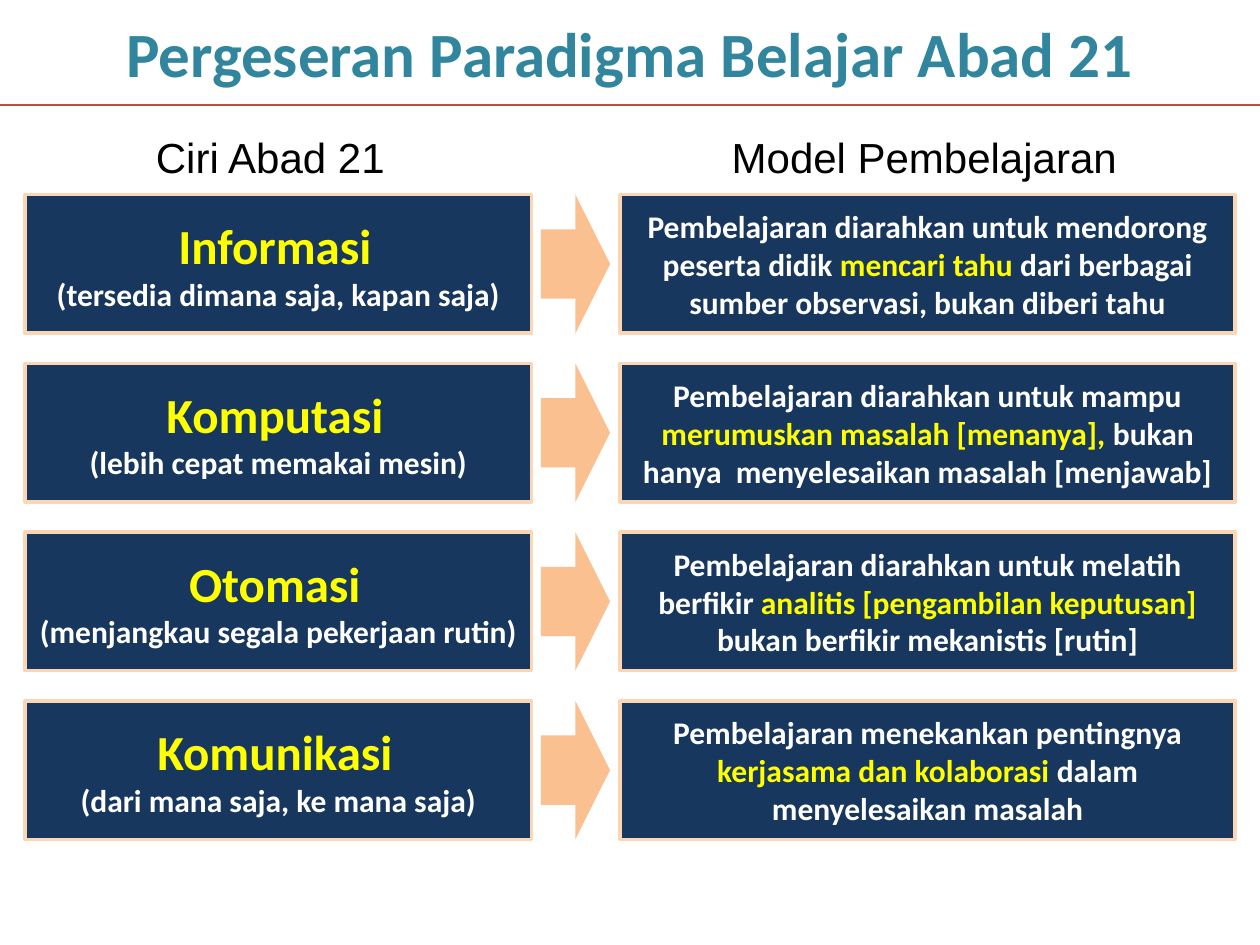
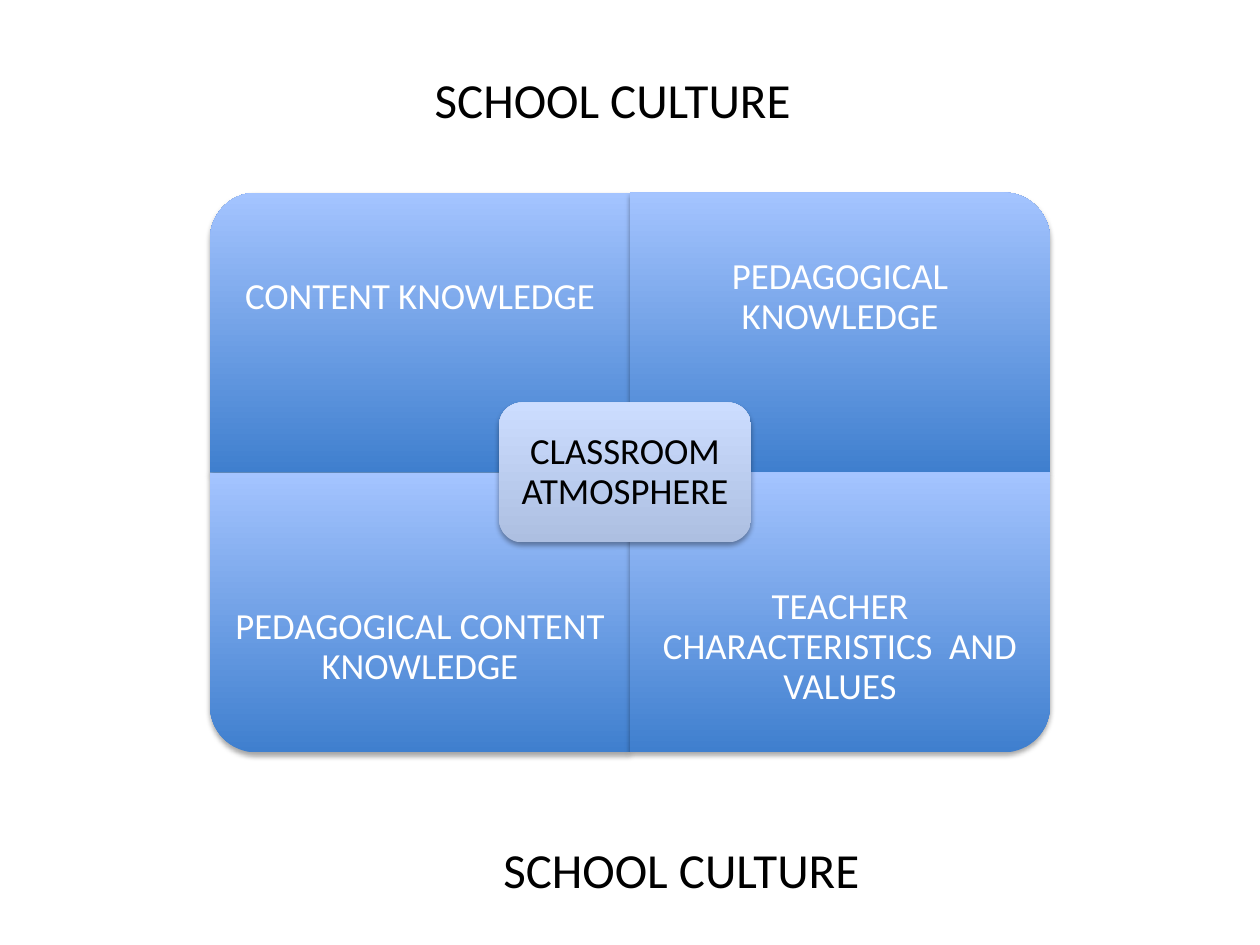
"""Builds two slides on learning in the 21st century and on school culture."""
from lxml import etree
from pptx import Presentation
from pptx.dml.color import RGBColor
from pptx.enum import shapes, text
from pptx.oxml import ns
from pptx.util import Pt

HUES = {
    "navy": "17375E", "peach": "FCD5B5", "orange": "FAC090", "teal": "31859C",
    "red": "BF4C48", "yellow": "FFFF00", "white": "FFFFFF", "black": "000000",
    "deep": "3F7FCE", "sky": "A4C4FF", "mist": "ADBFE1", "pale": "CCDDFF",
}
RGB = {name: RGBColor.from_string(hue) for name, hue in HUES.items()}
KINDS = shapes.MSO_SHAPE
MID = {"vertical_anchor": text.MSO_ANCHOR.MIDDLE, "word_wrap": True}
GROW = {"word_wrap": True, "auto_size": text.MSO_AUTO_SIZE.SHAPE_TO_FIT_TEXT}
LEFT, CENTER = text.PP_ALIGN.LEFT, text.PP_ALIGN.CENTER
SIDES = ("margin_left", "margin_top", "margin_right", "margin_bottom")


def write(shape, paras, frame, align=CENTER, gap=1.0, face="Calibri", bold=False):
    """Fill a shape with paragraphs made of (text, size, colour) runs."""
    body = shape.text_frame
    for key, value in frame.items():
        setattr(body, key, value)
    for i, runs in enumerate(paras):
        para = body.add_paragraph() if i else body.paragraphs[0]
        para.alignment, para.line_spacing = align, gap
        for words, size, hue in runs:
            run = para.add_run()
            run.text = words
            for key, value in {"name": face, "size": Pt(size), "bold": bold}.items():
                setattr(run.font, key, value)
            run.font.color.rgb = RGB[hue]


def block(slide, kind, spot, fill, line=None):
    """Add a shape with a solid fill, or a (bottom, top) gradient and a shadow."""
    shape = slide.shapes.add_shape(kind, *map(Pt, spot))
    shape.shadow.inherit = False
    if line:
        shape.line.color.rgb, shape.line.width = RGB[line], Pt(2)
    else:
        shape.line.fill.background()
    if isinstance(fill, str):
        shape.fill.solid()
        shape.fill.fore_color.rgb = RGB[fill]
        return shape
    shape.fill.gradient()
    shape.fill.gradient_angle = 90
    for stop, hue in zip(shape.fill.gradient_stops, fill):
        stop.color.rgb = RGB[hue]
    props = shape.element.spPr
    props.find(ns.qn("a:gradFill")).set("rotWithShape", "0")
    glow = etree.SubElement(
        props.find(ns.qn("a:effectLst")), ns.qn("a:outerShdw"),
        blurRad=str(Pt(3.1)), dist=str(Pt(1.8)), dir="5400000", rotWithShape="0")
    tint = etree.SubElement(glow, ns.qn("a:srgbClr"), val=HUES["black"])
    etree.SubElement(tint, ns.qn("a:alpha"), val="35000")
    return shape


deck = Presentation()
deck.slide_width, deck.slide_height = Pt(720), Pt(540)

slide = deck.slides.add_slide(deck.slide_layouts[5])
title = slide.shapes.title
for key, value in {"left": 0, "top": 0, "width": 720, "height": 60}.items():
    setattr(title, key, Pt(value))
write(title, [[("Pergeseran Paradigma Belajar Abad 21", 36, "teal")]],
      MID | {"auto_size": text.MSO_AUTO_SIZE.NONE}, bold=True)

rule = slide.shapes.add_connector(shapes.MSO_CONNECTOR.STRAIGHT, 0, Pt(60), Pt(720), Pt(60))
rule.line.color.rgb, rule.line.width = RGB["red"], Pt(0.75)
etree.SubElement(rule.element.spPr, ns.qn("a:effectLst"))

for words, left, width in (("Ciri Abad 21", 82, 147), ("Model Pembelajaran", 411, 237)):
    head = slide.shapes.add_textbox(Pt(left), Pt(71.7), Pt(width), Pt(36))
    write(head, [[(words, 24, "black")]], GROW | {"word_wrap": False}, LEFT, face="Arial")

SHIFTS = [
    ("Informasi", "(tersedia dimana saja, kapan saja)",
     "Pembelajaran diarahkan untuk mendorong peserta didik ", "mencari tahu ",
     "dari berbagai sumber observasi, bukan diberi tahu"),
    ("Komputasi", "(lebih cepat memakai mesin)",
     "Pembelajaran diarahkan untuk mampu ", "merumuskan masalah [menanya], ",
     "bukan hanya  menyelesaikan masalah [menjawab]"),
    ("Otomasi", "(menjangkau segala pekerjaan rutin)",
     "Pembelajaran diarahkan untuk melatih berfikir ", "analitis [pengambilan keputusan] ",
     "bukan berfikir mekanistis [rutin]"),
    ("Komunikasi", "(dari mana saja, ke mana saja)",
     "Pembelajaran menekankan pentingnya ", "kerjasama dan kolaborasi",
     " dalam menyelesaikan masalah"),
]
for row, (trait, note, start, key, end) in enumerate(SHIFTS):
    top, high = 111.3 + 96.4 * row, 79.2
    cause = block(slide, KINDS.RECTANGLE, (14.4, top, 289.4, high), "navy", "peach")
    write(cause, [[(trait, 28, "yellow"), (" ", 18, "white")], [(note, 18, "white")]],
          MID, bold=True)
    block(slide, KINDS.RIGHT_ARROW, (309, top, 39.6, high), "orange")
    model = block(slide, KINDS.RECTANGLE, (354.4, top, 351.4, high), "navy", "peach")
    write(model, [[(start, 18, "white"), (key, 18, "yellow"), (end, 18, "white")]],
          MID, bold=True)

slide = deck.slides.add_slide(deck.slide_layouts[6])
wide, high = 240, 160
PARTS = [
    ("CONTENT KNOWLEDGE", 0, 0, 270), ("PEDAGOGICAL KNOWLEDGE", 1, 0, 0),
    ("PEDAGOGICAL CONTENT KNOWLEDGE", 0, 1, 180),
    ("TEACHER CHARACTERISTICS  AND VALUES", 1, 1, 90),
]
for words, col, row, turn in PARTS:
    left, top = 120 + wide * col, 110 + high * row
    w, h = (high, wide) if turn % 180 else (wide, high)
    spot = (left + (wide - w) / 2, top + (high - h) / 2, w, h)
    part = block(slide, KINDS.ROUND_1_RECTANGLE, spot, ("deep", "sky"))
    part.rotation = turn
    label = slide.shapes.add_textbox(Pt(left), Pt(top + 40 * row), Pt(wide), Pt(120))
    write(label, [[(words, 21, "white")]], MID | dict.fromkeys(SIDES, Pt(11.5)), gap=0.9)

core = block(slide, KINDS.ROUNDED_RECTANGLE, (285.2, 230, 144, 80), ("mist", "pale"))
write(core, [[("CLASSROOM ATMOSPHERE", 21, "black")]],
      MID | dict.fromkeys(SIDES, Pt(4)), gap=0.9)

for left, top, width in ((192, 36, 316), (238.5, 476, 301.5)):
    frame = slide.shapes.add_textbox(Pt(left), Pt(top), Pt(width), Pt(41))
    write(frame, [[("SCHOOL CULTURE", 28, "black")]], GROW)

deck.save("out.pptx")
